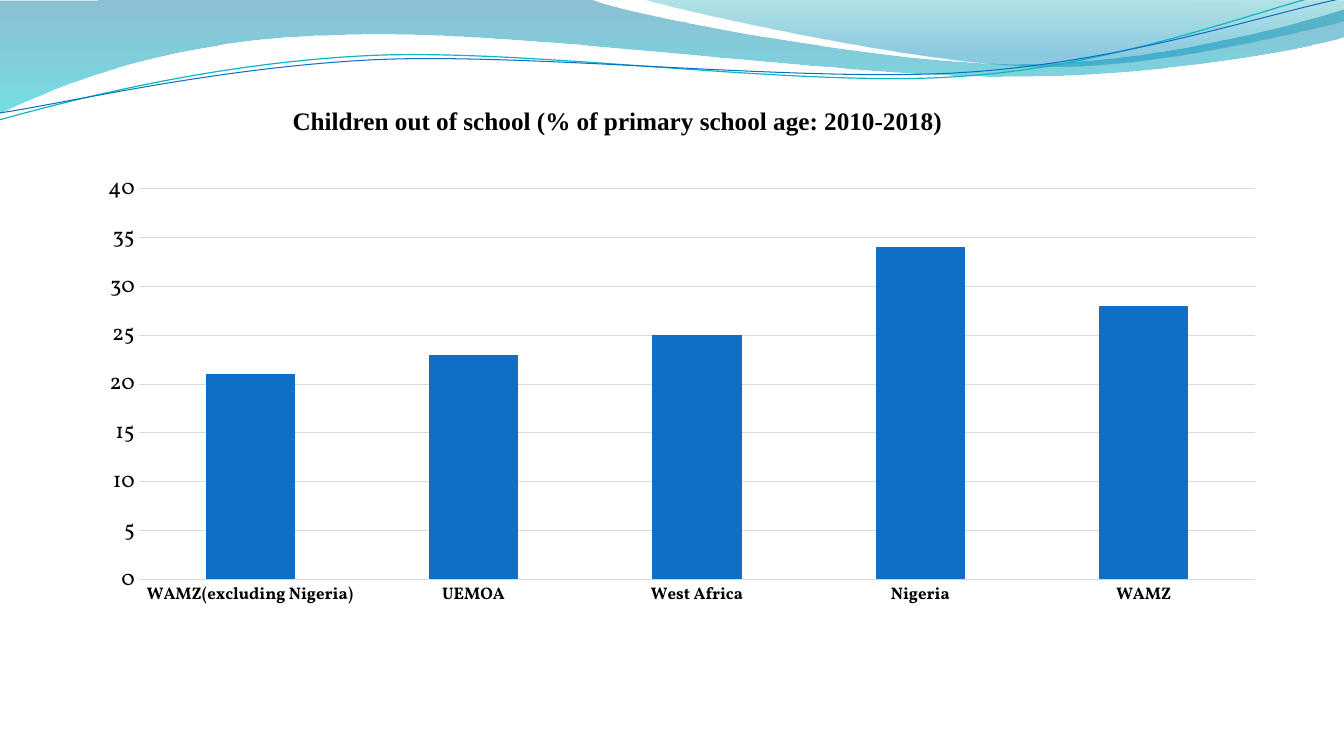
from lxml import etree
from pptx import Presentation
from pptx.chart.data import CategoryChartData
from pptx.dml.color import RGBColor
from pptx.enum.chart import XL_CHART_TYPE, XL_TICK_MARK
from pptx.enum.text import PP_ALIGN
from pptx.oxml import parse_xml
from pptx.oxml.ns import nsdecls, qn
from pptx.util import Cm, Pt

COLUMN = XL_CHART_TYPE.COLUMN_CLUSTERED
NO_TICK = XL_TICK_MARK.NONE
CENTER = PP_ALIGN.CENTER

BLACK = RGBColor(0x00, 0x00, 0x00)
BLUE = RGBColor(0x0F, 0x6F, 0xC6)
TEAL = RGBColor(0x0A, 0xB8, 0xBF)
GRAY = RGBColor(0xD9, 0xD9, 0xD9)
DEEP = RGBColor(0x00, 0x74, 0xA1)
AQUA = RGBColor(0x00, 0xC6, 0xCF)
GREEN = RGBColor(0x00, 0xA1, 0xA9)
SKY = RGBColor(0x00, 0x8B, 0xBF)

INCH = 2.54

WAVES = [
    ([(0, 0.01), (5.87, 0),
      (6.34, 0.18, 8.85, 0.64, 10.11, 0.64),
      (11.38, 0.64, 12.78, 0.27, 13.33, 0.1),
      (13.35, 0.37),
      (13.11, 0.45, 11.6, 0.77, 9.94, 0.76),
      (8.29, 0.76, 5.09, 0.29, 3.43, 0.35),
      (1.72, 0.37, 0.61, 0.84, -0.01, 1.13)],
     [(0, DEEP, 45), (1, AQUA, 55)]),
    ([(6.39, 0),
      (6.79, 0.12, 9.09, 0.63, 10.25, 0.66),
      (11.41, 0.7, 12.82, 0.33, 13.33, 0.22),
      (13.33, 0.01)],
     [(0, GREEN, 30), (0.8, SKY, 45)]),
]
CURVES = [
    ([(-0.01, 1.19),
      (0.64, 1.01, 2.11, 0.62, 3.69, 0.55),
      (5.27, 0.48, 7.9, 0.87, 9.5, 0.76),
      (11.1, 0.66, 12.52, 0.08, 13.31, -0.1)], TEAL, 0.85),
    ([(0, 1.12),
      (0.63, 1.03, 2.18, 0.66, 3.78, 0.59),
      (5.37, 0.53, 7.96, 0.82, 9.55, 0.72),
      (11.15, 0.62, 12.55, 0.14, 13.34, -0.02)], BLUE, 0.75),
]
RATES = {"WAMZ(excluding Nigeria)": 21, "UEMOA": 23, "West Africa": 25,
         "Nigeria": 34, "WAMZ": 28}
PLOT = {"x": 0.05, "y": 0.051, "w": 0.943, "h": 0.72}


def pairs(part):
    return [(Cm(x * INCH), Cm(y * INCH)) for x, y in zip(part[::2], part[1::2])]


class Page:
    head = "Times New Roman"
    body = "Vollkorn"

    def __init__(self, slide):
        self.slide = slide

    def shape(self, path, close):
        first, *rest = [pairs(part)[-1] for part in path]
        build = self.slide.shapes.build_freeform(*first)
        build.add_line_segments(rest, close=close)
        shape = build.convert_to_shape()
        shape.shadow.inherit = False
        self.bend(shape, path[1:])
        return shape

    def bend(self, shape, parts):
        lines = list(shape._element.spPr.iter(qn("a:lnTo")))
        for line, part in zip(lines, parts):
            if len(part) == 2:
                continue
            line.tag = qn("a:cubicBezTo")
            line.clear()
            for x, y in pairs(part):
                point = etree.SubElement(line, qn("a:pt"))
                point.set("x", str(x - shape.left))
                point.set("y", str(y - shape.top))

    def wave(self, path, stops):
        shape = self.shape(path, True)
        shape.line.fill.background()
        fill = shape.fill
        fill.gradient()
        fill.gradient_angle = 270
        for stop, (place, color, alpha) in zip(fill.gradient_stops, stops):
            stop.position = place
            stop.color.rgb = color
        tints = shape._element.spPr.iter(qn("a:srgbClr"))
        for tint, (place, color, alpha) in zip(list(tints), stops):
            etree.SubElement(tint, qn("a:alpha")).set("val", str(alpha * 1000))

    def curve(self, path, color, width):
        shape = self.shape(path, False)
        shape.fill.background()
        shape.line.color.rgb = color
        shape.line.width = Pt(width)

    def style(self, font, name, size, bold=False):
        font.name = name
        font.size = Pt(size)
        font.bold = bold
        font.color.rgb = BLACK

    def text(self, words, left, top, width, height, size):
        box = self.slide.shapes.add_textbox(Cm(left), Cm(top), Cm(width), Cm(height))
        box.text_frame.word_wrap = True
        para = box.text_frame.paragraphs[0]
        para.alignment = CENTER
        run = para.add_run()
        run.text = words
        self.style(run.font, self.head, size, True)

    def axis(self, axis, size, bold):
        axis.major_tick_mark = NO_TICK
        axis.minor_tick_mark = NO_TICK
        axis.format.line.fill.background()
        self.style(axis.tick_labels.font, self.body, size, bold)

    def chart(self, rates, left, top, width, height):
        data = CategoryChartData()
        data.categories = list(rates)
        data.add_series("Series 1", list(rates.values()))
        chart = self.slide.shapes.add_chart(
            COLUMN, Cm(left), Cm(top), Cm(width), Cm(height), data).chart
        self.style(chart.font, self.body, 10)
        chart.has_title = False
        chart.has_legend = False
        self.axis(chart.category_axis, 12, True)
        scale = chart.value_axis
        self.axis(scale, 16, False)
        scale.minimum_scale, scale.maximum_scale, scale.major_unit = 0, 40, 5
        grid = scale.major_gridlines.format.line
        grid.color.rgb = GRAY
        grid.width = Pt(0.75)
        plot = chart.plots[0]
        plot.gap_width = 150
        plot.vary_by_categories = False
        bars = plot.series[0].format.fill
        bars.solid()
        bars.fore_color.rgb = BLUE
        self.layout(chart)

    def layout(self, chart):
        area = chart._chartSpace.chart.plotArea
        for old in area.findall(qn("c:layout")):
            area.remove(old)
        modes = "".join(f'<c:{k}Mode val="edge"/>' for k in "xy")
        sizes = "".join(f'<c:{k} val="{v}"/>' for k, v in PLOT.items())
        area.insert(0, parse_xml(
            f'<c:layout {nsdecls("c")}><c:manualLayout>'
            f'<c:layoutTarget val="inner"/>{modes}{sizes}'
            '</c:manualLayout></c:layout>'))


def main():
    deck = Presentation()
    deck.slide_width = Cm(33.87)
    deck.slide_height = Cm(19.05)
    page = Page(deck.slides.add_slide(deck.slide_layouts[6]))
    for wave in WAVES:
        page.wave(*wave)
    for curve in CURVES:
        page.curve(*curve)
    page.chart(RATES, 2, 4.06, 29.85, 13.67)
    page.text("Children out of school (% of primary school age: 2010-2018)",
              6.77, 2.54, 17.58, 1.47, 18)
    deck.save("out.pptx")


if __name__ == "__main__":
    main()
